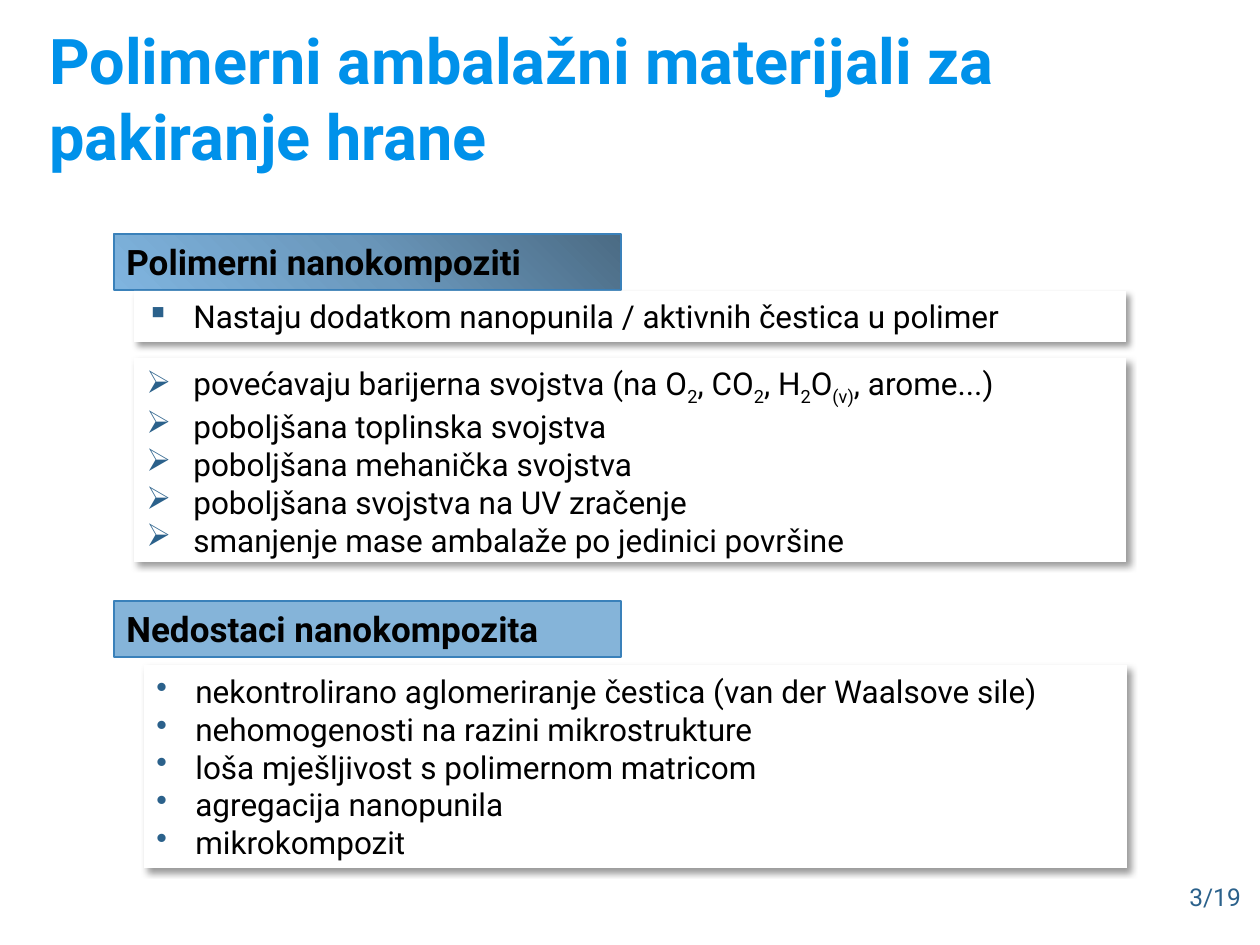
from copy import deepcopy

from lxml import etree
from pptx import Presentation
from pptx.dml.color import RGBColor
from pptx.enum.shapes import MSO_SHAPE
from pptx.enum.text import MSO_ANCHOR, MSO_AUTO_SIZE, PP_ALIGN
from pptx.oxml.ns import qn
from pptx.util import Emu, Pt

RECTANGLE = MSO_SHAPE.RECTANGLE
TOP, MIDDLE, BOTTOM = MSO_ANCHOR.TOP, MSO_ANCHOR.MIDDLE, MSO_ANCHOR.BOTTOM
LEFT, JUSTIFY = PP_ALIGN.LEFT, PP_ALIGN.JUSTIFY
FIT_SHAPE = MSO_AUTO_SIZE.SHAPE_TO_FIT_TEXT

BLACK = RGBColor(0x00, 0x00, 0x00)
WHITE = RGBColor(0xFF, 0xFF, 0xFF)
TITLE_BLUE = RGBColor(0x00, 0x91, 0xEA)
DARK_BLUE = RGBColor(0x2B, 0x61, 0x8B)
EDGE_BLUE = RGBColor(0x3A, 0x81, 0xBA)
HEADING_BLUE = RGBColor(0x85, 0xB4, 0xD9)
HEADING_GRADIENT = [
    (0, RGBColor(0x4B, 0x6B, 0x84)),
    (0.5, RGBColor(0x6B, 0x98, 0xBC)),
    (1, RGBColor(0x7F, 0xB4, 0xDF)),
]

EMU_PER_PX = 914400 / 126


def px(length):
    return Emu(round(length * EMU_PER_PX))


class SlideBuilder:
    """Holds the shared style and the slide being filled."""

    font_name = "Roboto"

    def __init__(self, page):
        self.page = page

    def style(self, para, size, color, bold=False):
        para.font.name = self.font_name
        para.font.size = Pt(size)
        para.font.color.rgb = color
        para.font.bold = bold

    def text(self, at, words, size, color, bold=False, anchor=TOP, inset=6, wrap=True):
        frame = self.page.shapes.add_textbox(*map(px, at)).text_frame
        frame.word_wrap = wrap
        frame.vertical_anchor = anchor
        frame.margin_top = frame.margin_bottom = px(inset)
        para = frame.paragraphs[0]
        para.text = words
        self.style(para, size, color, bold)

    def rectangle(self, at, anchor):
        box = self.page.shapes.add_shape(RECTANGLE, *map(px, at))
        box.shadow.inherit = False
        frame = box.text_frame
        frame.word_wrap = True
        frame.auto_size = FIT_SHAPE
        frame.vertical_anchor = anchor
        return box

    def heading(self, at, words, color=None, gradient=None):
        box = self.rectangle(at, TOP)
        if gradient:
            self.fill_gradient(box, gradient)
        else:
            box.fill.solid()
            box.fill.fore_color.rgb = color
        box.line.color.rgb = EDGE_BLUE
        box.line.width = Pt(0.75)
        para = box.text_frame.paragraphs[0]
        para.text = words
        para.alignment = LEFT
        self.style(para, 20, BLACK, bold=True)

    def fill_gradient(self, box, stops):
        box.fill.gradient()
        box.fill.gradient_angle = 225
        stop_list = box._element.spPr.find(".//" + qn("a:gsLst"))
        while len(stop_list) < len(stops):
            stop_list.append(deepcopy(stop_list[0]))
        for stop, (position, color) in zip(box.fill.gradient_stops, stops):
            stop.position = position
            stop.color.rgb = color

    def bullet_card(self, at, lines, bullet, indent, align=LEFT, anchor=TOP):
        """Each line is a list of spans, where every second one is a subscript."""
        box = self.rectangle(at, anchor)
        box.fill.solid()
        box.fill.fore_color.rgb = WHITE
        box.line.fill.background()
        self.drop_shadow(box)
        frame = box.text_frame
        for number, spans in enumerate(lines):
            para = frame.add_paragraph() if number else frame.paragraphs[0]
            para.alignment = align
            self.add_bullet(para, bullet, indent)
            self.style(para, 18, BLACK)
            for place, words in enumerate(spans):
                span = para.add_run()
                span.text = words
                if place % 2:
                    span._r.get_or_add_rPr().set("baseline", "-25000")

    def drop_shadow(self, box):
        effects = box._element.spPr.find(qn("a:effectLst"))
        shadow = etree.SubElement(
            effects, qn("a:outerShdw"), blurRad=str(Pt(4)), dist=str(Pt(3)),
            dir="2700000", algn="tl", rotWithShape="0")
        color = etree.SubElement(shadow, qn("a:srgbClr"), val=str(BLACK))
        etree.SubElement(color, qn("a:alpha"), val="40000")

    def add_bullet(self, para, bullet, indent):
        properties = para._p.get_or_add_pPr()
        properties.set("marL", str(px(indent)))
        properties.set("indent", str(-px(indent)))
        color = etree.SubElement(properties, qn("a:buClr"))
        etree.SubElement(color, qn("a:srgbClr"), val=str(DARK_BLUE))
        etree.SubElement(properties, qn("a:buChar"), char=bullet)


def main():
    deck = Presentation()
    deck.slide_width, deck.slide_height = px(1260), px(945)
    slide = SlideBuilder(deck.slides.add_slide(deck.slide_layouts[6]))

    slide.bullet_card((144, 665, 983, 203), [
        ["nekontrolirano aglomeriranje čestica (van der Waalsove sile)"],
        ["nehomogenosti na razini mikrostrukture"],
        ["loša mješljivost s polimernom matricom"],
        ["agregacija nanopunila"],
        ["mikrokompozit"],
    ], "•", 39, JUSTIFY, MIDDLE)
    slide.bullet_card((134, 358, 992, 204), [
        ["povećavaju barijerna svojstva (na O", "2", ", CO", "2", ", H", "2",
         "O", "(v)", ", arome...)"],
        ["poboljšana toplinska svojstva"],
        ["poboljšana mehanička svojstva"],
        ["poboljšana svojstva na UV zračenje"],
        ["smanjenje mase ambalaže po jedinici površine"],
    ], "➢", 47)
    slide.heading((114, 234, 507, 56), "Polimerni nanokompoziti",
                  gradient=HEADING_GRADIENT)
    slide.heading((114, 601, 507, 56), "Nedostaci nanokompozita", HEADING_BLUE)
    slide.bullet_card((134, 291, 992, 51), [
        ["Nastaju dodatkom nanopunila / aktivnih čestica u polimer"],
    ], "▪", 47)
    slide.text((37, 26, 1179, 159), "Polimerni ambalažni materijali za pakiranje hrane",
               36, TITLE_BLUE, bold=True, anchor=BOTTOM, inset=12)
    slide.text((1177, 876, 77, 50), "3/19", 14, DARK_BLUE, wrap=False)

    deck.save("out.pptx")


if __name__ == "__main__":
    main()
